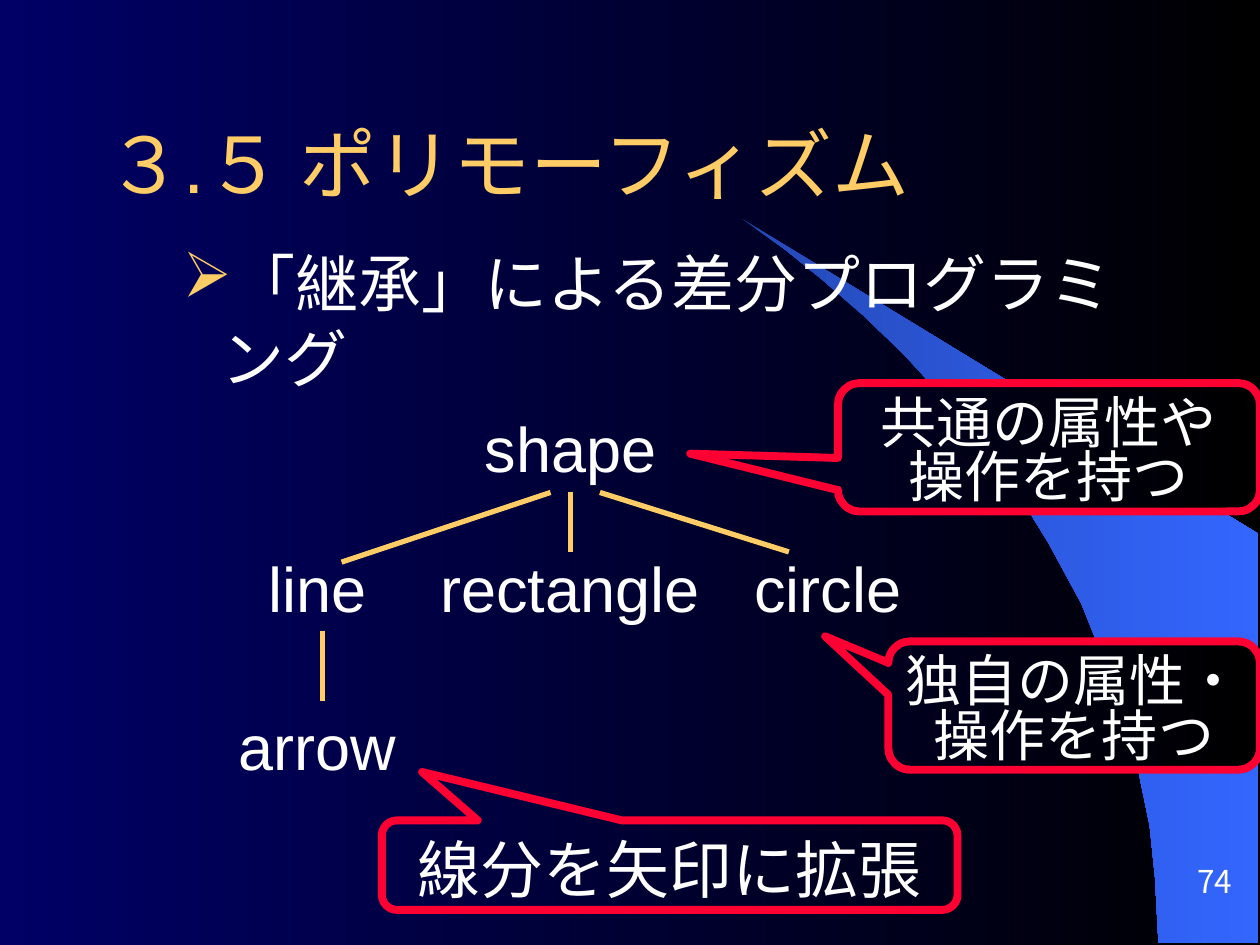
from lxml.etree import SubElement
from pptx import Presentation
from pptx.dml.color import RGBColor
from pptx.enum.shapes import MSO_CONNECTOR, MSO_SHAPE
from pptx.enum.text import MSO_ANCHOR, PP_ALIGN
from pptx.oxml.ns import qn
from pptx.util import Pt

NAVY = RGBColor(0x00, 0x00, 0x66)
BLACK = RGBColor(0x00, 0x00, 0x00)
GOLD = RGBColor(0xFF, 0xCC, 0x66)
WHITE = RGBColor(0xFF, 0xFF, 0xFF)
RED = RGBColor(0xFF, 0x00, 0x33)
DEEP_BLUE = RGBColor(0x24, 0x49, 0xB6)
BRIGHT_BLUE = RGBColor(0x33, 0x66, 0xFF)
LATIN, ASIAN = "Arial", "Noto Sans CJK JP"
WIDTH, HEIGHT = 720, 540

# Content, all lengths in points
TITLE = "３.５ ポリモーフィズム"
BULLET = "「継承」による差分プログラミング"
PAGE_NUMBER = "74"
LABEL_SIZE = (180, 50.4)
LABELS = [  # text, centre x, top
    ("shape", 326, 230.4),
    ("line", 181.4, 310.4),
    ("rectangle", 325.6, 310.4),
    ("circle", 473, 310.4),
    ("arrow", 181.4, 400.4),
]
BRANCHES = [  # from x, from y, to x, to y
    (314.6, 281.4, 195.2, 321.2),
    (342.8, 281.4, 450.8, 315.4),
    (326, 281.4, 326, 315.4),
    (184.4, 360.6, 184.4, 400.4),
]
CALLOUTS = [  # text, box, pointer offset, text size, line pitch
    ("線分を矢印に拡張", (218.2, 468.8, 329, 51.2), (-0.43, -1.04), 36, 38),
    ("共通の属性や\v操作を持つ", (478.8, 218.9, 241.2, 73.4), (-0.85, 0.05), 32, 31),
    ("独自の属性・\v操作を持つ", (507.6, 366.5, 212.4, 73.4), (-0.67, -0.54), 32, 31),
]
SWOOSH = [
    (662.4, 538.6), (719.3, 539.3), (719.3, 304.6), (424.1, 124.6),
    (449.3, 143.3), (470.2, 159.8), (493.2, 180), (515.5, 201.6),
    (548.6, 237.6), (578.2, 276.5), (599, 310.3), (617.8, 344.9),
    (632.2, 380.2), (643, 411.8), (650.2, 438.5), (657.4, 472.3),
    (660.2, 501.1),
]


def set_all(target, values):
    for name, value in values.items():
        setattr(target, name, value)


def fill_gradient(fill, start, end):
    fill.gradient()
    fill.gradient_angle = 0
    for stop, color in zip(fill.gradient_stops, (start, end)):
        stop.color.rgb = color


def backdrop_color(x):
    """Colour of the page gradient at x."""
    share = 1 - x / WIDTH
    return RGBColor(*(round(part * share) for part in NAVY))


def write(shape, text, size, color=WHITE, font=LATIN, para_format=None, **frame_format):
    frame = shape.text_frame
    set_all(frame, {"word_wrap": True, **frame_format})
    para = frame.paragraphs[0]
    para.text = text
    set_all(para, para_format or {})
    for span in para.runs:
        set_all(span.font, {"size": Pt(size), "name": font})
        span.font.color.rgb = color
        SubElement(span.font._element, qn("a:ea"), typeface=ASIAN)
    return para


def add_box(page, left, top, width, height):
    return page.shapes.add_textbox(Pt(left), Pt(top), Pt(width), Pt(height))


deck = Presentation()
set_all(deck, {"slide_width": Pt(WIDTH), "slide_height": Pt(HEIGHT)})
page = deck.slides.add_slide(deck.slide_layouts[6])
fill_gradient(page.background.fill, NAVY, BLACK)

# Blue swoosh
builder = page.shapes.build_freeform(*SWOOSH[0], scale=Pt(1))
builder.add_line_segments(SWOOSH[1:], close=True)
swoosh = builder.convert_to_shape()
swoosh.shadow.inherit = False
swoosh.line.fill.background()
fill_gradient(swoosh.fill, DEEP_BLUE, BRIGHT_BLUE)

# Title, bullet and page number
write(add_box(page, 54, 48.2, 636.5, 90), TITLE, 44, GOLD,
      vertical_anchor=MSO_ANCHOR.MIDDLE)

para = write(add_box(page, 54, 133.9, 612, 74.2), BULLET, 36, font=ASIAN,
             para_format={"line_spacing": Pt(43)},
             margin_left=Pt(14.4), margin_right=Pt(14.4), margin_top=Pt(6))
properties = para._p.get_or_add_pPr()
set_all_indents = {"marL": Pt(58.4), "indent": -Pt(22.4)}
for name, value in set_all_indents.items():
    properties.set(name, str(int(value)))
bullet_color = SubElement(properties, qn("a:buClr"))
SubElement(bullet_color, qn("a:srgbClr"), val=str(GOLD))
SubElement(properties, qn("a:buChar"), char="➢")

write(add_box(page, 638, 483.8, 73.4, 30.2), PAGE_NUMBER, 18, font=ASIAN,
      para_format={"alignment": PP_ALIGN.RIGHT}, word_wrap=False,
      vertical_anchor=MSO_ANCHOR.BOTTOM, margin_top=0, margin_bottom=0)

# Class tree
label_width, label_height = LABEL_SIZE
for text, center, top in LABELS:
    box = add_box(page, center - label_width / 2, top, label_width, label_height)
    write(box, text, 36, para_format={"alignment": PP_ALIGN.CENTER},
          vertical_anchor=MSO_ANCHOR.BOTTOM)

for ends in BRANCHES:
    branch = page.shapes.add_connector(MSO_CONNECTOR.STRAIGHT, *map(Pt, ends))
    branch.line.color.rgb = GOLD
    branch.line.width = Pt(3)
    SubElement(branch._element.spPr, qn("a:effectLst"))

# Callouts, filled to blend with the page gradient
for text, bounds, pointer, size, pitch in CALLOUTS:
    callout = page.shapes.add_shape(MSO_SHAPE.ROUNDED_RECTANGULAR_CALLOUT, *map(Pt, bounds))
    for index, value in enumerate((*pointer, 0.17)):
        callout.adjustments[index] = value
    callout.shadow.inherit = False
    left, _, width, _ = bounds
    fill_gradient(callout.fill, backdrop_color(left), backdrop_color(left + width))
    callout.line.color.rgb = RED
    callout.line.width = Pt(4.5)
    write(callout, text, size,
          para_format={"alignment": PP_ALIGN.CENTER, "line_spacing": Pt(pitch)},
          word_wrap=False, vertical_anchor=MSO_ANCHOR.MIDDLE, margin_top=Pt(12))

deck.save("out.pptx")
